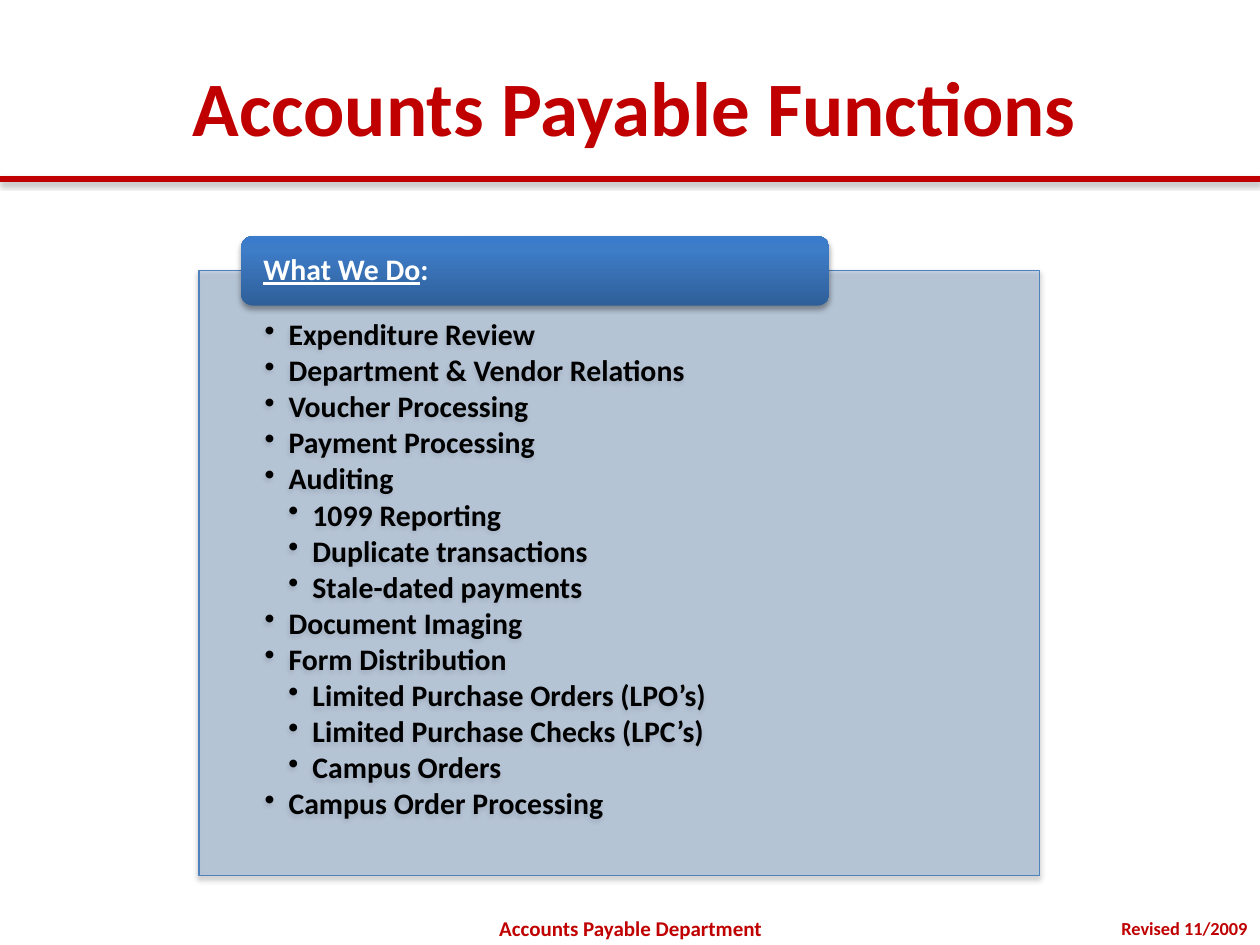
from lxml import etree
from pptx import Presentation
from pptx.dml.color import RGBColor
from pptx.enum.shapes import MSO_CONNECTOR, MSO_SHAPE
from pptx.enum.text import MSO_ANCHOR, PP_ALIGN
from pptx.oxml.ns import qn
from pptx.util import Inches, Pt

LEFT, CENTER, RIGHT = PP_ALIGN.LEFT, PP_ALIGN.CENTER, PP_ALIGN.RIGHT
TOP, MIDDLE = MSO_ANCHOR.TOP, MSO_ANCHOR.MIDDLE

TITLE = "Accounts Payable Functions"
HEADING = ("What We Do", ":")
FUNCTIONS = [
    ("Expenditure Review", []),
    ("Department & Vendor Relations", []),
    ("Voucher Processing", []),
    ("Payment Processing", []),
    ("Auditing", ["1099 Reporting", "Duplicate transactions", "Stale-dated payments"]),
    ("Document Imaging", []),
    ("Form Distribution", ["Limited Purchase Orders (LPO’s)",
                           "Limited Purchase Checks (LPC’s)", "Campus Orders"]),
    ("Campus Order Processing", []),
]
# text, left, width, size name, alignment
FOOTERS = [
    ("Revised 11/2009", 7.67, 2.33, "date", RIGHT),
    ("Accounts Payable Department", 3.42, 3.17, "footer", CENTER),
]

THEME = {
    "font": "Calibri",
    "red": "C00000", "white": "FFFFFF", "black": "000000",
    "panel": "95B3D7", "panel_line": "4F81BD", "panel_alpha": 48,
    "tab": [(0, "2F5F99"), (80, "3D7CC7"), (100, "3A7CCB")],
    "sizes": {"title": 44, "body": 17, "footer": 12, "date": 10.5},
}
WIDTH, HEIGHT = 10, 7.5
RULE_Y = 1.42
PANEL = (1.58, 2.15, 6.67, 4.8)
TAB_HEIGHT = 0.55
TAB = (PANEL[0] + PANEL[2] * 0.05, PANEL[1] - TAB_HEIGHT / 2, PANEL[2] * 0.7, TAB_HEIGHT)
FOOTER_TOP, FOOTER_HEIGHT = 7.23, 0.27
INDENT = 0.19


def inches(box):
    return [Inches(length) for length in box]


def color(name):
    return RGBColor.from_string(THEME[name])


def add_child(parent, tag, **attributes):
    values = {key: str(value) for key, value in attributes.items()}
    return etree.SubElement(parent, qn(tag), values)


def add_shadow(shape):
    effects = add_child(shape._element.spPr, "a:effectLst")
    shadow = add_child(effects, "a:outerShdw", blurRad=Pt(3.1), dist=Pt(1.8),
                       dir=90 * 60000, rotWithShape=0)
    shade = add_child(shadow, "a:srgbClr", val=THEME["black"])
    add_child(shade, "a:alpha", val=35000)


def set_frame(frame, anchor, margins=(0.1, 0.05, 0.1, 0.05)):
    frame.word_wrap = True
    frame.vertical_anchor = anchor
    for side, margin in zip(("left", "top", "right", "bottom"), margins):
        setattr(frame, f"margin_{side}", Inches(margin))


def add_run(paragraph, text, size, color_name, underline=False):
    run = paragraph.add_run()
    run.text = text
    formats = {"name": THEME["font"], "size": Pt(THEME["sizes"][size]),
               "bold": True, "underline": underline}
    for key, value in formats.items():
        setattr(run.font, key, value)
    run.font.color.rgb = color(color_name)


def add_title(slide):
    title = slide.shapes.title
    title.left, title.top, title.width, title.height = inches((0.33, 0.42, 9.42, 0.83))
    set_frame(title.text_frame, MIDDLE)
    paragraph = title.text_frame.paragraphs[0]
    paragraph.alignment = CENTER
    add_run(paragraph, TITLE, "title", "red")


def add_panel(slide):
    panel = slide.shapes.add_shape(MSO_SHAPE.RECTANGLE, *inches(PANEL))
    panel.fill.solid()
    panel.fill.fore_color.rgb = color("panel")
    fill = panel._element.spPr.find(qn("a:solidFill"))
    add_child(fill[0], "a:alpha", val=THEME["panel_alpha"] * 1000)
    panel.line.color.rgb = color("panel_line")
    panel.line.width = Pt(0.75)
    add_shadow(panel)

    frame = panel.text_frame
    set_frame(frame, TOP, (0.52, 0.39, 0.52, 0.13))
    items = [(text, level) for name, parts in FUNCTIONS
             for text, level in [(name, 1)] + [(part, 2) for part in parts]]
    for index, (text, level) in enumerate(items):
        paragraph = frame.add_paragraph() if index else frame.paragraphs[0]
        paragraph.alignment = LEFT
        paragraph.level = level
        paragraph.line_spacing = 0.9
        paragraph.space_after = Pt(2.25)
        properties = paragraph._p.get_or_add_pPr()
        properties.set("marL", str(Inches(INDENT * level)))
        properties.set("indent", str(-Inches(INDENT)))
        add_child(properties, "a:buChar", char="•")
        add_run(paragraph, text, "body", "black")


def add_tab(slide):
    tab = slide.shapes.add_shape(MSO_SHAPE.ROUNDED_RECTANGLE, *inches(TAB))
    tab.fill.gradient()
    tab.fill.gradient_angle = 90
    stops = tab._element.spPr.find(qn("a:gradFill")).find(qn("a:gsLst"))
    stops.clear()
    for position, value in THEME["tab"]:
        stop = add_child(stops, "a:gs", pos=position * 1000)
        add_child(stop, "a:srgbClr", val=value)
    tab.line.fill.background()
    add_shadow(tab)

    set_frame(tab.text_frame, MIDDLE, (0.15, 0, 0.15, 0))
    paragraph = tab.text_frame.paragraphs[0]
    paragraph.alignment = LEFT
    paragraph.line_spacing = 0.9
    for text, underline in zip(HEADING, (True, False)):
        add_run(paragraph, text, "body", "white", underline)


def add_rule(slide):
    rule = slide.shapes.add_connector(MSO_CONNECTOR.STRAIGHT,
                                      *inches((0, RULE_Y, WIDTH, RULE_Y)))
    rule.line.color.rgb = color("red")
    rule.line.width = Pt(3)
    add_shadow(rule)


def add_footers(slide):
    for text, left, width, size, alignment in FOOTERS:
        box = slide.shapes.add_textbox(*inches((left, FOOTER_TOP, width, FOOTER_HEIGHT)))
        set_frame(box.text_frame, MIDDLE)
        paragraph = box.text_frame.paragraphs[0]
        paragraph.alignment = alignment
        add_run(paragraph, text, size, "red")


def main():
    presentation = Presentation()
    presentation.slide_width, presentation.slide_height = inches((WIDTH, HEIGHT))
    slide = presentation.slides.add_slide(presentation.slide_layouts[5])
    for add_part in (add_title, add_panel, add_tab, add_rule, add_footers):
        add_part(slide)
    presentation.save("out.pptx")


if __name__ == "__main__":
    main()
